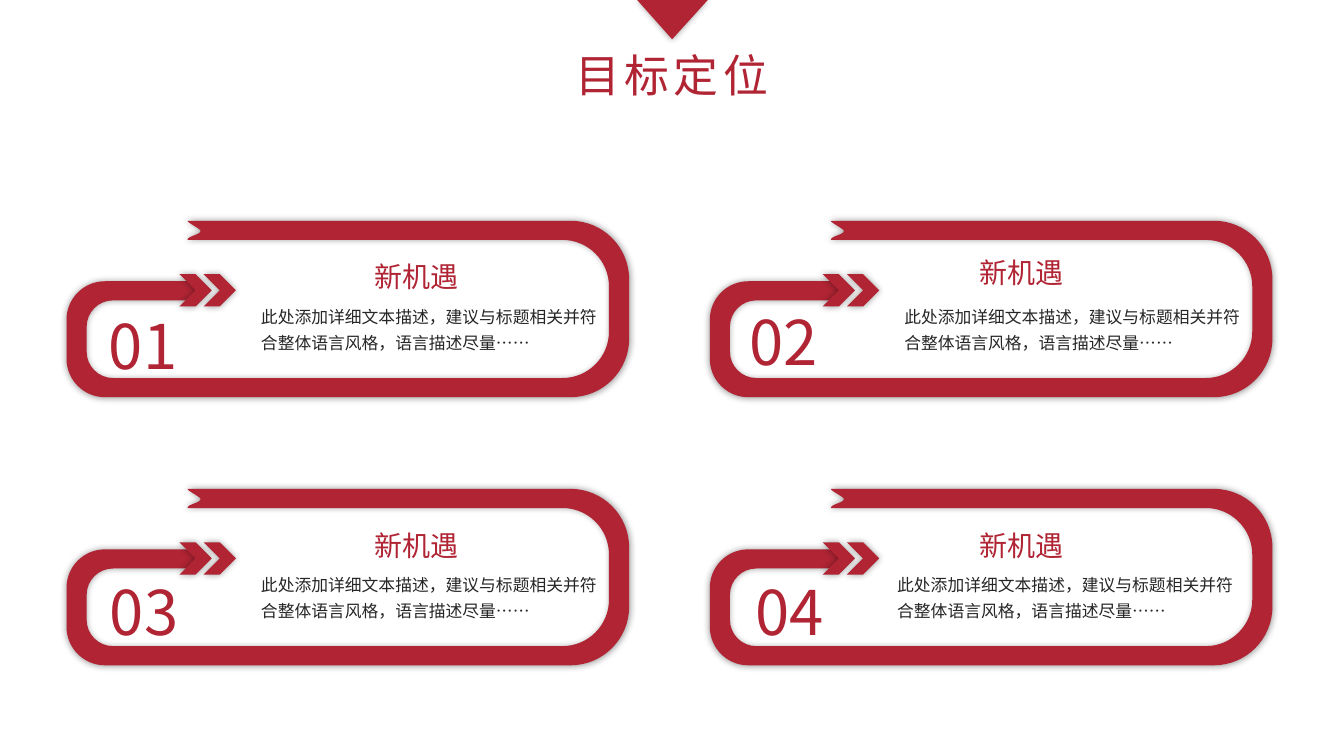
from lxml import etree
from pptx import Presentation
from pptx.dml.color import RGBColor
from pptx.enum.shapes import MSO_SHAPE as SHAPE
from pptx.enum.text import MSO_AUTO_SIZE as AUTO, PP_ALIGN as ALIGN
from pptx.oxml import parse_xml
from pptx.oxml.ns import nsdecls, qn
from pptx.util import Inches, Pt

FONT = "Noto Sans CJK SC"
COLORS = {"red": "B02434", "text": "262626", "shadow": "000000"}
HEADING = "新机遇"
BODY = "此处添加详细文本描述，建议与标题相关并符合整体语言风格，语言描述尽量……"
CARD_LEFT, CARD_TOP = 0.66, 2.19
COLUMN_STEP, ROW_STEP = 6.38, 2.66
CARDS = [
    {"number_at": (0.28, 0.60), "heading_at": (2.95, 0.34), "body_at": (1.83, 0.74)},
    {"number_at": (0.25, 0.56), "heading_at": (2.57, 0.30), "body_at": (1.83, 0.74)},
    {"number_at": (0.29, 0.57), "heading_at": (2.95, 0.34), "body_at": (1.83, 0.74)},
    {"number_at": (0.31, 0.57), "heading_at": (2.57, 0.34), "body_at": (1.76, 0.74)},
]


def add_text(shapes, text, x, y, w, h, size, color="red", align=ALIGN.CENTER,
             line=None, wrap=True, spacing=None, insets=(0.1, 0.05)):
    tf = shapes.add_textbox(Inches(x), Inches(y), Inches(w), Inches(h)).text_frame
    tf.word_wrap = wrap
    tf.auto_size = AUTO.SHAPE_TO_FIT_TEXT
    tf.margin_left = tf.margin_right = Inches(insets[0])
    tf.margin_top = tf.margin_bottom = Inches(insets[1])
    p = tf.paragraphs[0]
    p.alignment = align
    if line:
        p.line_spacing = line
    r = p.add_run()
    r.text = text
    r.font.size = Pt(size)
    r.font.name = FONT
    r.font.color.rgb = RGBColor.from_string(COLORS[color])
    rpr = r.font._element
    etree.SubElement(rpr, qn("a:ea")).set("typeface", FONT)
    if spacing:
        rpr.set("spc", str(spacing * 100))


def style(sp):
    sp.fill.solid()
    sp.fill.fore_color.rgb = RGBColor.from_string(COLORS["red"])
    sp.line.fill.background()
    sp.shadow.inherit = False
    effects = sp._element.spPr.find(qn("a:effectLst"))
    effects.append(parse_xml(
        f'<a:outerShdw {nsdecls("a")} blurRad="{Pt(5)}" dist="0" dir="0" algn="ctr" '
        f'rotWithShape="0"><a:srgbClr val="{COLORS["shadow"]}">'
        '<a:alpha val="40000"/></a:srgbClr></a:outerShdw>'))


def add_preset(shapes, kind, x, y, w, h):
    sp = shapes.add_shape(kind, Inches(x), Inches(y), Inches(w), Inches(h))
    style(sp)
    return sp


def turn(start, corner, end):
    first, second = (tuple(a + 0.55 * (c - a) for a, c in zip(anchor, corner))
                     for anchor in (start, end))
    return [[start], [first, second, end]]


def ribbon_segments():
    return [
        *turn((5, 0), (5.58, 0), (5.58, 0.58)),
        *turn((5.58, 1.17), (5.58, 1.75), (5, 1.75)),
        *turn((0.38, 1.75), (0, 1.75), (0, 1.37)),
        *turn((0, 0.98), (0, 0.6), (0.38, 0.6)),
        [(1.28, 0.6)], [(1.28, 0.79)],
        *turn((0.46, 0.79), (0.2, 0.79), (0.2, 1.05)),
        *turn((0.2, 1.3), (0.2, 1.56), (0.46, 1.56)),
        *turn((4.92, 1.56), (5.38, 1.56), (5.38, 1.1)),
        *turn((5.38, 0.65), (5.38, 0.19), (4.92, 0.19)),
        [(1.2, 0.19)],
        [(1.2, 0.15), (1.33, 0.14), (1.33, 0.1)],
        [(1.33, 0.08), (1.2, 0.02), (1.2, 0)],
    ]


def add_ribbon(shapes, x, y):
    segments = ribbon_segments()
    builder = shapes.build_freeform(Inches(1.2), 0)
    builder.add_line_segments([(Inches(px), Inches(py)) for *_, (px, py) in segments])
    sp = builder.convert_to_shape(Inches(x), Inches(y))
    lines = list(sp._element.iter(qn("a:lnTo")))
    for line, (*controls, _) in zip(lines, segments):
        if controls:
            line.tag = qn("a:cubicBezTo")
            for i, (px, py) in enumerate(controls):
                pt = etree.Element(qn("a:pt"), x=str(Inches(px)), y=str(Inches(py)))
                line.insert(i, pt)
    etree.SubElement(lines[0].getparent(), qn("a:close"))
    style(sp)


def add_card(s, index, number_at, heading_at, body_at):
    row, column = divmod(index, 2)
    x, y = CARD_LEFT + column * COLUMN_STEP, CARD_TOP + row * ROW_STEP

    def place(offset):
        return x + offset[0], y + offset[1]

    shapes = s.shapes.add_group_shape().shapes
    add_ribbon(shapes, x, y)
    for i in range(2):
        add_preset(shapes, SHAPE.CHEVRON, x + 1.12 + i * 0.24, y + 0.53, 0.32, 0.32)
    add_text(shapes, f"{index + 1:02d}", *place(number_at), 0.96, 0.97, 44, line=1.3)
    add_text(s.shapes, HEADING, *place(heading_at), 1.04, 0.44, 20, wrap=False)
    add_text(s.shapes, BODY, *place(body_at), 3.59, 0.6, 12, color="text",
             align=ALIGN.LEFT, line=1.3)


def add_header(s):
    add_text(s.shapes, "目标定位", 3.65, 0.43, 6.03, 0.61, 32, spacing=3, insets=(0.07, 0.04))
    marker = add_preset(s.shapes, SHAPE.ISOSCELES_TRIANGLE, 6.32, 0, 0.7, 0.39)
    marker.adjustments[0] = 0.495
    marker._element.spPr.find(qn("a:xfrm")).set("flipV", "1")


def main():
    prs = Presentation()
    prs.slide_width, prs.slide_height = Inches(13.33), Inches(7.5)
    s = prs.slides.add_slide(prs.slide_layouts[6])
    add_header(s)
    for index, card in enumerate(CARDS):
        add_card(s, index, **card)
    prs.save("out.pptx")


if __name__ == "__main__":
    main()
